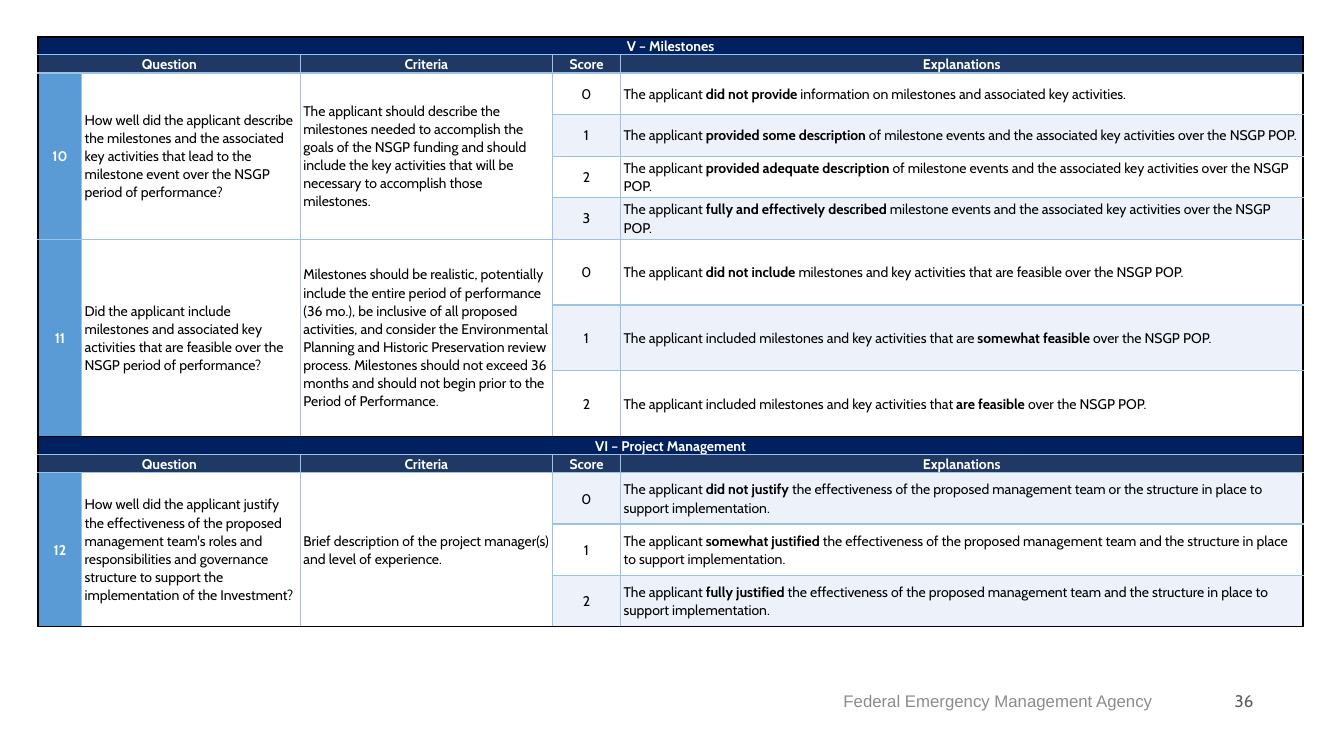
from lxml import etree
from pptx import Presentation
from pptx.dml.color import RGBColor
from pptx.enum.text import MSO_ANCHOR as Anchor, PP_ALIGN as Align
from pptx.oxml.ns import qn
from pptx.util import Inches, Pt

NAVY, HEADER_BLUE, NUMBER_BLUE, SHADE = "002060", "1F3864", "5B9BD5", "EDF1F9"
WHITE, BLACK, GRID_BLUE, BRIGHT_BLUE = "FFFFFF", "000000", "9CC2E5", "85C9FF"

# Column widths are shares of the slide width, row heights of its height (percent)
COLUMNS = [3.22, 16.28, 18.75, 5.08, 50.75]
HEADING_ROW = 2.35

# Section: title, line under the title, questions
# Question: number, row height, question, criteria, explanations by score
SECTIONS = [
    ("V – Milestones", BRIGHT_BLUE, [
        ("10", 5.5,
         "How well did the applicant describe the milestones and the associated key activities "
         "that lead to the milestone event over the NSGP period of performance?",
         "The applicant should describe the milestones needed to accomplish the goals of the NSGP "
         "funding and should include the key activities that will be necessary to accomplish "
         "those milestones.",
         ["The applicant **did not provide** information on milestones and associated key activities.",
          "The applicant **provided some description** of milestone events and the associated key "
          "activities over the NSGP POP.",
          "The applicant **provided adequate description** of milestone events and the associated key "
          "activities over the NSGP POP.",
          "The applicant **fully and effectively described** milestone events and the associated key "
          "activities over the NSGP POP."]),
        ("11", 8.7,
         "Did the applicant include milestones and associated key activities that are feasible "
         "over the NSGP period of performance?",
         "Milestones should be realistic, potentially include the entire period of performance "
         "(36 mo.), be inclusive of all proposed activities, and consider the Environmental Planning "
         "and Historic Preservation review process. Milestones should not exceed 36 months and "
         "should not begin prior to the Period of Performance.",
         ["The applicant **did not include** milestones and key activities that are feasible over "
          "the NSGP POP.",
          "The applicant included milestones and key activities that are **somewhat feasible** over "
          "the NSGP POP.",
          "The applicant included milestones and key activities that **are feasible** over "
          "the NSGP POP."]),
    ]),
    ("VI – Project Management", GRID_BLUE, [
        ("12", 6.78,
         "How well did the applicant justify the effectiveness of the proposed management team's "
         "roles and responsibilities and governance structure to support the implementation of "
         "the Investment?",
         "Brief description of the project manager(s) and level of experience.",
         ["The applicant **did not justify** the effectiveness of the proposed management team or the "
          "structure in place to support implementation.",
          "The applicant **somewhat justified** the effectiveness of the proposed management team and "
          "the structure in place to support implementation.",
          "The applicant **fully justified** the effectiveness of the proposed management team and "
          "the structure in place to support implementation."]),
    ]),
]


def rgb(hex_color):
    return RGBColor.from_string(hex_color)


class ScoringSlide:
    font = "Cabin"
    table_size = 10
    footer_size = 12

    def __init__(self, deck):
        self.width, self.height = deck.slide_width, deck.slide_height
        self.slide = deck.slides.add_slide(deck.slide_layouts[6])

    def across(self, percent):
        return round(self.width * percent / 100)

    def down(self, percent):
        return round(self.height * percent / 100)

    def add_text(self, paragraph, text, size, color, align, bold=False, font=None):
        """Add text run by run; ** switches bold on and off."""
        paragraph.alignment = align
        for index, part in enumerate(text.split("**")):
            run = paragraph.add_run()
            run.text = part
            run.font.name = font or self.font
            run.font.size = Pt(size)
            run.font.bold = bold or index % 2 == 1
            run.font.color.rgb = rgb(color)

    def footer(self, text, left, width, color, font=None):
        box = self.slide.shapes.add_textbox(
            self.across(left), self.down(90), self.across(width), self.down(5.33))
        box.text_frame.word_wrap = True
        box.text_frame.vertical_anchor = Anchor.MIDDLE
        self.add_text(box.text_frame.paragraphs[0], text, self.footer_size, color, Align.RIGHT,
                      font=font)

    def table(self, left, top, columns, rows):
        frame = self.slide.shapes.add_table(
            len(rows), len(columns), self.across(left), self.down(top),
            self.across(sum(columns)), self.down(sum(rows)))
        grid = frame.table
        grid.first_row = grid.horz_banding = False
        for column, share in zip(grid.columns, columns):
            column.width = self.across(share)
        for row, share in zip(grid.rows, rows):
            row.height = self.down(share)
        return grid

    def borders(self, cell, sides):
        properties = cell._tc.get_or_add_tcPr()
        for index, (side, color) in enumerate(sides.items()):
            width = 1.5 if color == BLACK else 1
            line = etree.Element(qn("a:ln" + side), w=str(Pt(width)))
            fill = etree.SubElement(line, qn("a:solidFill"))
            etree.SubElement(fill, qn("a:srgbClr"), val=color)
            properties.insert(index, line)

    def block(self, grid, row, col, text, fill=WHITE, color=BLACK, bold=False,
              align=Align.CENTER, rows=1, cols=1, **sides):
        """Fill one cell, or a merged block of cells; sides overrides line colours."""
        lines = dict.fromkeys("LRTB", GRID_BLUE)
        lines.update(sides)
        if col == 0:
            lines["L"] = BLACK
        if col + cols == len(COLUMNS):
            lines["R"] = BLACK
        for r in range(row, row + rows):
            for c in range(col, col + cols):
                cell = grid.cell(r, c)
                cell.fill.solid()
                cell.fill.fore_color.rgb = rgb(fill)
                self.borders(cell, lines)
        origin = grid.cell(row, col)
        if rows * cols > 1:
            origin.merge(grid.cell(row + rows - 1, col + cols - 1))
        origin.vertical_anchor = Anchor.MIDDLE
        origin.margin_left = origin.margin_right = Inches(0.03)
        origin.margin_top = origin.margin_bottom = 0
        paragraph = origin.text_frame.paragraphs[0]
        paragraph.line_spacing = 1.07
        self.add_text(paragraph, text, self.table_size, color, align, bold)


def main():
    deck = Presentation()
    deck.slide_width, deck.slide_height = Inches(13.33), Inches(7.5)
    page = ScoringSlide(deck)

    # Scoring table
    heights = []
    for _, _, questions in SECTIONS:
        heights += [HEADING_ROW] * 2
        for _, height, _, _, explanations in questions:
            heights += [height] * len(explanations)
    grid = page.table(2.85, 4.85, COLUMNS, heights)

    row = 0
    for title, rule, questions in SECTIONS:
        # Section title and column headings
        page.block(grid, row, 0, title, NAVY, WHITE, True, cols=5, T=BLACK, B=rule)
        headings = [(0, 2, "Question"), (2, 1, "Criteria"), (3, 1, "Score"), (4, 1, "Explanations")]
        for col, cols, heading in headings:
            page.block(grid, row + 1, col, heading, HEADER_BLUE, WHITE, True, cols=cols, T=rule)
        row += 2

        # Questions with their scores
        for entry in questions:
            number, _, question, criteria, explanations = entry
            count = len(explanations)
            end = BLACK if entry is questions[-1] else GRID_BLUE
            page.block(grid, row, 0, number, NUMBER_BLUE, WHITE, True, rows=count, B=end)
            page.block(grid, row, 1, question, align=Align.LEFT, rows=count, B=end)
            page.block(grid, row, 2, criteria, align=Align.LEFT, rows=count, B=end)
            for score, explanation in enumerate(explanations):
                fill = SHADE if row % 2 else WHITE
                bottom = end if score == count - 1 else GRID_BLUE
                page.block(grid, row, 3, str(score), fill, B=bottom)
                page.block(grid, row, 4, explanation, fill, align=Align.LEFT, B=bottom)
                row += 1

    # Footer and page number
    page.footer("Federal Emergency Management Agency", 50, 36.5, "8C8C8C", "Arial")
    page.footer("36", 86.5, 7.5, "5A5B5D")

    deck.save("out.pptx")


if __name__ == "__main__":
    main()
